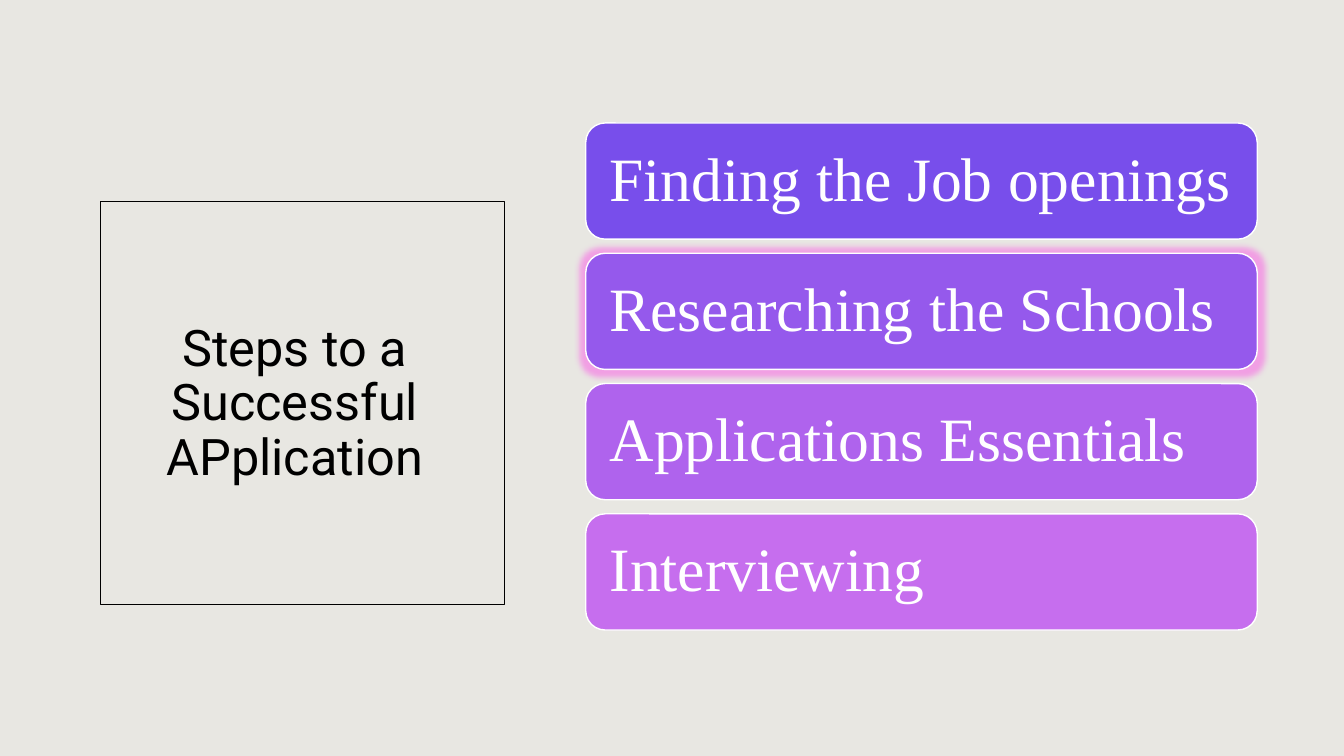
from math import cos, pi, sin

from lxml.etree import SubElement
from pptx import Presentation
from pptx.dml.color import RGBColor
from pptx.enum.shapes import MSO_SHAPE
from pptx.enum.text import MSO_ANCHOR, MSO_AUTO_SIZE, PP_ALIGN
from pptx.oxml.ns import qn
from pptx.util import Inches, Pt

COLORS = {"back": "E8E7E2", "ink": "000000", "white": "FFFFFF", "glow": "FF33E7"}
STEPS = {
    "Finding the Job openings": "784EEB",
    "Researching the Schools": "9559EC",
    "Applications Essentials": "AF63ED",
    "Interviewing": "C66EEE",
}
ACTIVE = "Researching the Schools"


def rgb(name):
    return RGBColor.from_string(COLORS[name])


def style(para, font, size, color):
    para.line_spacing = 0.9
    for run in para.runs:
        run.font.name = font
        run.font.size = Pt(size)
        run.font.color.rgb = rgb(color)


def add_glow(shape, radius, alpha):
    effects = shape._element.spPr.find(qn("a:effectLst"))
    glow = SubElement(effects, qn("a:glow"), rad=str(Pt(radius)))
    tint = SubElement(glow, qn("a:srgbClr"), val=COLORS["glow"])
    SubElement(tint, qn("a:alpha"), val=str(alpha * 1000))


def add_arch(slide, left, top, width, height):
    radius = width / 2
    steps = 90
    curve = [
        (left + radius - radius * cos(pi * i / steps),
         top + radius - radius * sin(pi * i / steps))
        for i in range(steps + 1)
    ]
    base = top + height
    pen = slide.shapes.build_freeform(left, base, scale=Inches(1))
    pen.add_line_segments(curve + [(left + width, base)], close=True)
    arch = pen.convert_to_shape()
    arch.shadow.inherit = False
    arch.fill.background()
    arch.line.color.rgb = rgb("ink")
    arch.line.width = Pt(0.5)


def add_title(slide, left, top, width, height):
    add_arch(slide, left, top, width, height)
    title = slide.shapes.title
    title.left, title.top = Inches(left + 0.26), Inches(top + 1.09)
    title.width, title.height = Inches(width - 0.58), Inches(2.61)
    frame = title.text_frame
    frame.text = "Steps to a Successful APplication"
    frame.word_wrap = True
    frame.auto_size = MSO_AUTO_SIZE.NONE
    frame.vertical_anchor = MSO_ANCHOR.MIDDLE
    frame.paragraphs[0].alignment = PP_ALIGN.CENTER
    style(frame.paragraphs[0], "Roboto", 36, "ink")


def add_steps(slide, left, top, width, height, gap):
    tall = (height - gap * (len(STEPS) - 1)) / len(STEPS)
    for row, (label, color) in enumerate(STEPS.items()):
        bar = slide.shapes.add_shape(
            MSO_SHAPE.ROUNDED_RECTANGLE, Inches(left),
            Inches(top + row * (tall + gap)), Inches(width), Inches(tall))
        bar.shadow.inherit = False
        bar.fill.solid()
        bar.fill.fore_color.rgb = RGBColor.from_string(color)
        bar.line.color.rgb = rgb("white")
        bar.line.width = Pt(1)
        frame = bar.text_frame
        frame.text = label
        frame.word_wrap = True
        frame.vertical_anchor = MSO_ANCHOR.MIDDLE
        frame.margin_left = Inches(0.18)
        frame.margin_right = Inches(0.1)
        frame.paragraphs[0].alignment = PP_ALIGN.LEFT
        style(frame.paragraphs[0], "Times New Roman", 44, "white")
        if label == ACTIVE:
            add_glow(bar, radius=8, alpha=40)


def main():
    deck = Presentation()
    deck.slide_width, deck.slide_height = Inches(13.33), Inches(7.5)
    slide = deck.slides.add_slide(deck.slide_layouts[5])
    slide.background.fill.solid()
    slide.background.fill.fore_color.rgb = rgb("back")
    add_title(slide, 0.91, 1.62, 4.09, 4.02)
    add_steps(slide, 5.81, 1.22, 6.66, 5.03, 0.14)
    deck.save("out.pptx")


if __name__ == "__main__":
    main()
